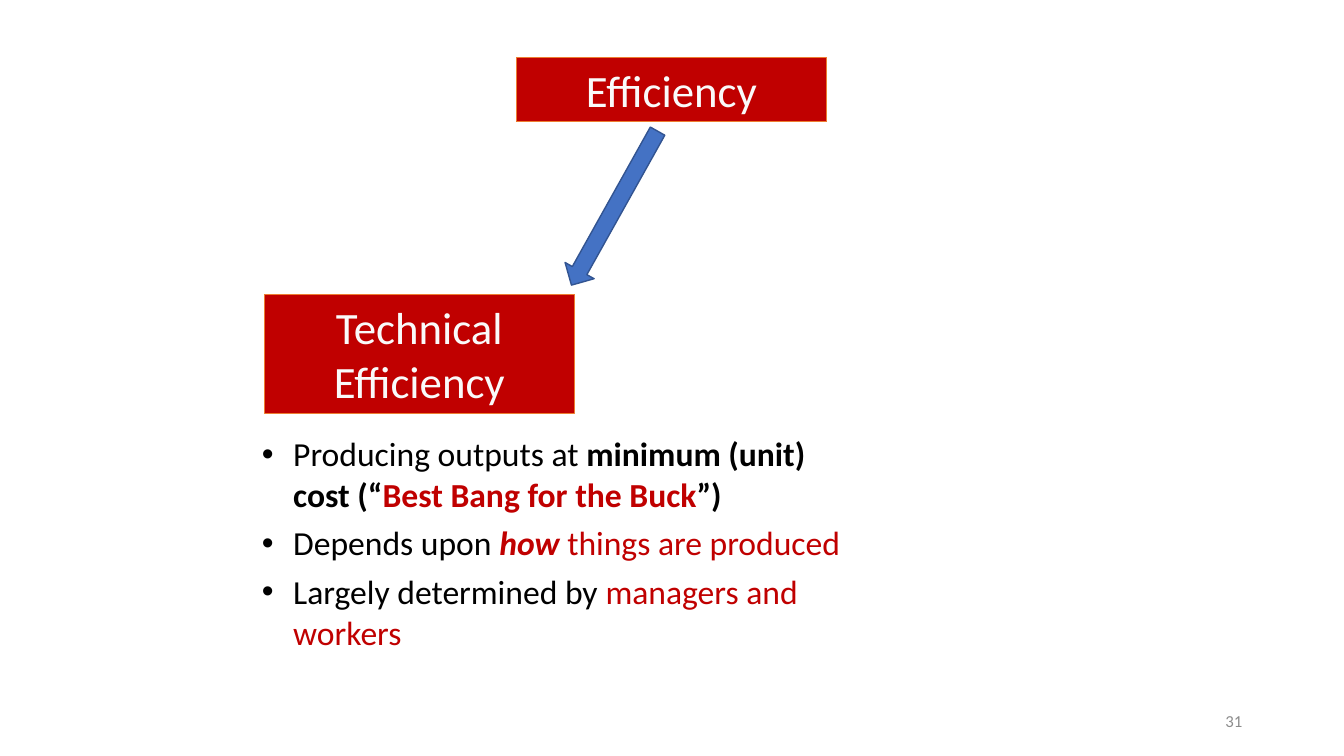
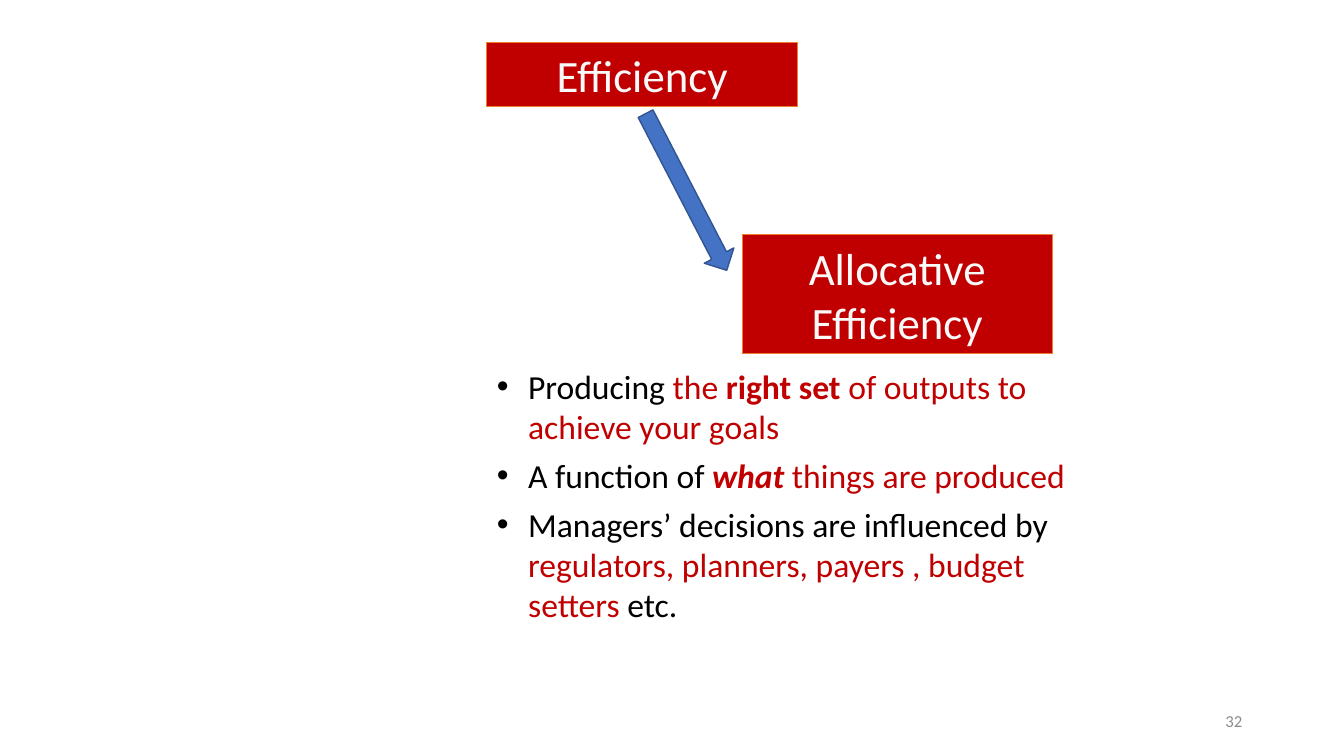
from dataclasses import dataclass

from lxml import etree
from pptx import Presentation
from pptx.dml.color import RGBColor
from pptx.enum.shapes import MSO_SHAPE
from pptx.enum.text import MSO_ANCHOR, MSO_AUTO_SIZE, PP_ALIGN
from pptx.oxml.ns import qn
from pptx.util import Pt

EMU_PER_PX = 9144  # 100 px to the inch
RECTANGLE = MSO_SHAPE.RECTANGLE
RIGHT_ARROW = MSO_SHAPE.RIGHT_ARROW
CENTER, RIGHT = PP_ALIGN.CENTER, PP_ALIGN.RIGHT
MIDDLE = MSO_ANCHOR.MIDDLE
GROW = MSO_AUTO_SIZE.SHAPE_TO_FIT_TEXT


def px(length):
    return length * EMU_PER_PX


@dataclass(frozen=True)
class Theme:
    font: str = "Calibri"
    bullet_font: str = "Arial"
    red: str = "C00000"
    orange: str = "ED7D31"
    blue: str = "4472C4"
    dark_blue: str = "325491"
    black: str = "000000"
    white: str = "FAFAFA"
    grey: str = "8C8C8C"
    heading_size: int = 32
    body_size: int = 24
    number_size: int = 12


class Deck:
    """Holds the theme, the presentation and the current slide."""

    def __init__(self, theme, width, height):
        self.theme = theme
        self.presentation = Presentation()
        self.presentation.slide_width = px(width)
        self.presentation.slide_height = px(height)
        self.slide = None

    def add_page(self, number):
        blank = self.presentation.slide_layouts[6]
        self.slide = self.presentation.slides.add_slide(blank)
        frame = self.text_box(942, 695, 300, 40)
        frame.vertical_anchor = MIDDLE
        para = frame.paragraphs[0]
        para.text = str(number)
        para.alignment = RIGHT
        self.style(para.font, self.theme.number_size, self.theme.grey)

    def style(self, font, size, color):
        font.name = self.theme.font
        font.size = Pt(size)
        font.color.rgb = RGBColor.from_string(color)

    def text_box(self, left, top, width, height):
        box = self.slide.shapes.add_textbox(px(left), px(top), px(width), px(height))
        box.text_frame.word_wrap = True
        return box.text_frame

    def shape(self, kind, left, top, width, height, fill, line, line_width):
        shape = self.slide.shapes.add_shape(
            kind, px(left), px(top), px(width), px(height))
        shape.shadow.inherit = False
        shape.fill.solid()
        shape.fill.fore_color.rgb = RGBColor.from_string(fill)
        shape.line.color.rgb = RGBColor.from_string(line)
        shape.line.width = Pt(line_width)
        return shape

    def heading(self, left, top, *lines):
        height = 10 + 54 * len(lines)
        box = self.shape(RECTANGLE, left, top, 308, height,
                         self.theme.red, self.theme.orange, 0.75)
        frame = box.text_frame
        frame.word_wrap = True
        frame.auto_size = GROW
        frame.text = "\n".join(lines)
        for para in frame.paragraphs:
            para.alignment = CENTER
            self.style(para.font, self.theme.heading_size, self.theme.white)

    def arrow(self, left, top, rotation):
        arrow = self.shape(RIGHT_ARROW, left, top, 175, 33,
                           self.theme.blue, self.theme.dark_blue, 1)
        arrow.rotation = rotation

    def bullets(self, left, top, width, height, items):
        """Each item is a list of (text, marks): r is red, b bold, i italic."""
        frame = self.text_box(left, top, width, height)
        frame.auto_size = GROW
        for index, spans in enumerate(items):
            para = frame.add_paragraph() if index else frame.paragraphs[0]
            self.add_bullet(para)
            para.space_before = Pt(6)
            para.font.name = self.theme.font
            para.font.size = Pt(self.theme.body_size)
            for text, marks in spans:
                span = para.add_run()
                span.text = text
                color = self.theme.red if "r" in marks else self.theme.black
                span.font.color.rgb = RGBColor.from_string(color)
                if "b" in marks:
                    span.font.bold = True
                if "i" in marks:
                    span.font.italic = True

    def add_bullet(self, para):
        para.level = 1
        properties = para._p.get_or_add_pPr()
        properties.set("marL", str(px(81)))
        properties.set("indent", str(px(-31)))
        etree.SubElement(properties, qn("a:buFont"), typeface=self.theme.bullet_font)
        etree.SubElement(properties, qn("a:buChar"), char="•")


def technical_efficiency(deck):
    deck.add_page(31)
    deck.heading(512, 57, "Efficiency")
    deck.arrow(522, 190, 119.2)
    deck.heading(262, 292, "Technical", "Efficiency")
    deck.bullets(200, 425, 667, 300, [
        [("Producing outputs at ", ""), ("minimum (unit) cost (“", "b"),
         ("Best Bang for the Buck", "rb"), ("”)", "b")],
        [("Depends upon ", ""), ("how", "rbi"), (" things are produced", "r")],
        [("Largely determined by ", ""), ("managers and workers", "r")],
    ])


def allocative_efficiency(deck):
    deck.add_page(32)
    deck.heading(483, 42, "Efficiency")
    deck.arrow(593, 174, 62.6)
    deck.heading(736, 233, "Allocative", "Efficiency")
    deck.bullets(433, 358, 650, 340, [
        [("Producing ", ""), ("the ", "r"), ("right set ", "rb"),
         ("of outputs to achieve your goals", "r")],
        [("A function of ", ""), ("what", "rbi"), (" things are produced", "r")],
        [("Managers’ decisions are influenced by ", ""),
         ("regulators, planners, payers , budget setters ", "r"), ("etc.", "")],
    ])


def main():
    deck = Deck(Theme(), 1333, 750)
    technical_efficiency(deck)
    allocative_efficiency(deck)
    deck.presentation.save("out.pptx")


if __name__ == "__main__":
    main()
